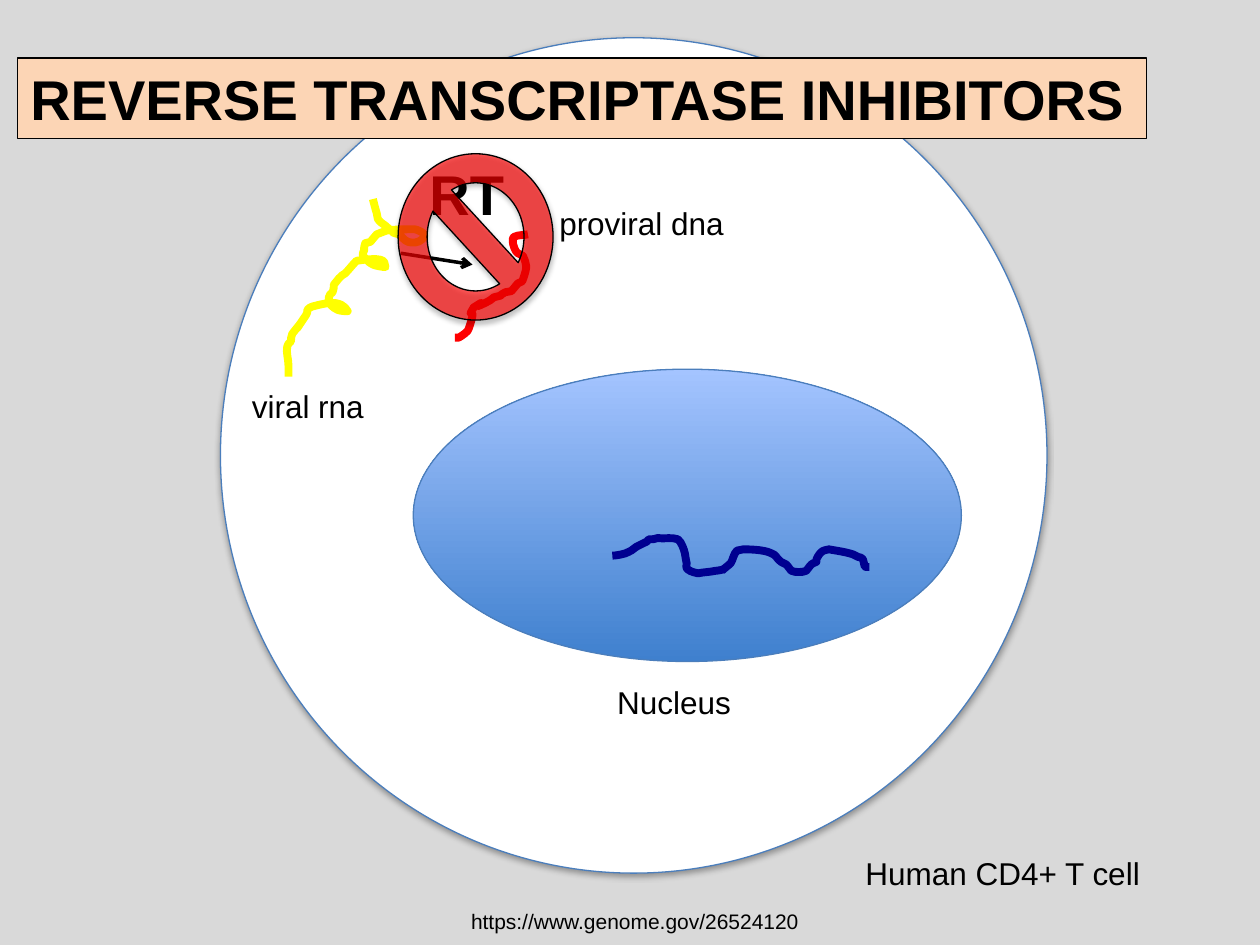
"""Build a slide showing how reverse transcriptase inhibitors act in a T cell."""
from dataclasses import dataclass

from lxml import etree
from pptx import Presentation
from pptx import util as u
from pptx.dml.color import RGBColor
from pptx.enum import shapes, text
from pptx.oxml import ns
from pptx.shapes.autoshape import Shape
from pptx.slide import Slide

WIDTH, HEIGHT = u.Inches(10), u.Inches(7.5)
COLUMNS, ROWS = 1000, 750

BLACK = RGBColor(0x00, 0x00, 0x00)
WHITE = RGBColor(0xFF, 0xFF, 0xFF)
GREY = RGBColor(0xD9, 0xD9, 0xD9)
OUTLINE_BLUE = RGBColor(0x4B, 0x7E, 0xBC)
DEEP_BLUE = RGBColor(0x3F, 0x80, 0xCE)
PALE_BLUE = RGBColor(0xA4, 0xC4, 0xFF)
NAVY = RGBColor(0x00, 0x00, 0x90)
YELLOW = RGBColor(0xFF, 0xFF, 0x00)
RED = RGBColor(0xFF, 0x00, 0x00)
PEACH = RGBColor(0xFC, 0xD5, 0xB5)

Point = tuple[int, int]


@dataclass(frozen=True)
class Area:
    """A block of grid cells."""
    column: int
    row: int
    columns: int
    rows: int

    def box(self) -> tuple[int, int, int, int]:
        """Return left, top, width and height."""
        return (*place((self.column, self.row)), *place((self.columns, self.rows)))


@dataclass(frozen=True)
class Label:
    """A caption with its place and size."""
    words: str
    area: Area
    points: int = 18
    bold: bool = False


@dataclass(frozen=True)
class Strand:
    """A nucleic acid strand: a start, then two controls and an end per curve."""
    color: RGBColor
    start: Point
    curves: tuple[tuple[int, int, int, int, int, int], ...]


LABELS = (
    Label("Human CD4+ T cell", Area(677, 673, 240, 40)),
    Label("Nucleus", Area(480, 537, 111, 40)),
    Label("viral rna", Area(190, 302, 111, 40)),
    Label("proviral dna", Area(434, 157, 152, 40)),
    Label("https://www.genome.gov/26524120", Area(364, 716, 283, 30), 12),
    Label("RT", Area(331, 122, 80, 64), 32, True),
)
TITLE = Label("REVERSE TRANSCRIPTASE INHIBITORS", Area(14, 46, 896, 64), 32, True)

HOST_DNA = (
    Strand(NAVY, (486, 441), (
        (488, 441, 496, 440, 499, 438), (502, 437, 504, 434, 507, 433),
        (508, 432, 510, 432, 511, 431), (513, 431, 514, 429, 515, 428),
        (518, 428, 520, 428, 522, 427), (527, 428, 533, 426, 538, 428),
        (541, 430, 543, 437, 543, 437), (544, 440, 544, 443, 545, 447),
        (545, 448, 544, 451, 546, 452), (548, 454, 554, 455, 554, 455),
        (559, 454, 564, 454, 568, 453), (570, 453, 574, 452, 574, 452))),
    Strand(NAVY, (573, 453), (
        (575, 451, 578, 449, 580, 447), (582, 444, 582, 440, 585, 437),
        (587, 436, 588, 436, 590, 436), (593, 436, 606, 436, 612, 439),
        (617, 441, 615, 442, 620, 446), (621, 447, 623, 447, 624, 448),
        (626, 450, 627, 452, 628, 453), (630, 454, 632, 454, 634, 454),
        (636, 454, 638, 454, 640, 453), (641, 452, 642, 450, 644, 448),
        (645, 447, 646, 447, 648, 446), (648, 444, 648, 443, 649, 442),
        (652, 437, 653, 437, 658, 436), (663, 437, 671, 438, 677, 440),
        (678, 441, 680, 441, 681, 442), (683, 442, 684, 443, 685, 444),
        (687, 451, 685, 450, 690, 450))),
)
VIRAL_RNA = Strand(YELLOW, (296, 158), (
    (297, 162, 298, 166, 299, 169), (299, 171, 299, 172, 300, 174),
    (303, 178, 304, 177, 308, 181), (315, 186, 309, 184, 317, 186),
    (319, 188, 321, 191, 324, 192), (327, 193, 332, 193, 335, 190),
    (341, 185, 330, 182, 329, 182), (322, 182, 314, 182, 307, 183),
    (304, 184, 299, 186, 299, 186), (297, 188, 296, 190, 294, 192),
    (293, 193, 291, 192, 290, 193), (289, 195, 289, 197, 289, 199),
    (288, 200, 288, 201, 288, 203), (291, 206, 292, 208, 296, 210),
    (298, 211, 304, 212, 306, 212), (305, 211, 306, 208, 304, 207),
    (300, 204, 284, 207, 283, 207), (280, 210, 277, 214, 274, 217),
    (272, 218, 271, 219, 269, 221), (268, 223, 266, 224, 265, 226),
    (265, 228, 265, 230, 264, 232), (263, 233, 261, 234, 261, 236),
    (260, 241, 264, 244, 268, 246), (271, 247, 274, 247, 276, 247),
    (275, 245, 273, 243, 271, 242), (265, 239, 258, 241, 253, 242),
    (250, 243, 246, 243, 244, 246), (244, 247, 244, 249, 243, 250),
    (242, 252, 240, 254, 239, 256), (229, 270, 246, 247, 232, 265),
    (231, 267, 231, 269, 231, 271), (230, 272, 228, 273, 228, 275),
    (227, 280, 229, 285, 229, 290), (229, 293, 229, 296, 229, 299)))
PROVIRAL_DNA = Strand(RED, (419, 186), (
    (416, 187, 412, 186, 408, 188), (407, 188, 407, 190, 407, 192),
    (407, 194, 409, 200, 411, 201), (412, 202, 414, 202, 415, 203),
    (418, 210, 419, 211, 415, 222), (415, 224, 412, 224, 411, 225),
    (409, 227, 408, 229, 406, 231), (404, 231, 403, 231, 401, 232),
    (392, 237, 403, 233, 392, 236), (390, 238, 388, 239, 386, 240),
    (368, 249, 392, 234, 376, 244), (369, 256, 380, 238, 372, 261),
    (372, 263, 366, 267, 364, 268), (363, 268, 362, 268, 361, 268)))


def place(cell: Point) -> Point:
    """Convert grid columns and rows to lengths."""
    return round(WIDTH * cell[0] / COLUMNS), round(HEIGHT * cell[1] / ROWS)


def add_body(slide: Slide, kind: shapes.MSO_SHAPE, area: Area,
             outline: RGBColor) -> Shape:
    """Add an outlined preset shape without a shadow."""
    body = slide.shapes.add_shape(kind, *area.box())
    body.shadow.inherit = False
    body.line.color.rgb = outline
    body.line.width = u.Pt(0.75)
    return body


def drop_shadow(body: Shape) -> None:
    """Cast a soft shadow straight below a shape."""
    effects = body._element.spPr.find(ns.qn("a:effectLst"))
    shadow = etree.SubElement(
        effects, ns.qn("a:outerShdw"), blurRad=str(u.Pt(3.1)),
        dist=str(u.Pt(1.8)), dir="5400000", rotWithShape="0")
    color = etree.SubElement(shadow, ns.qn("a:srgbClr"), val=str(BLACK))
    etree.SubElement(color, ns.qn("a:alpha"), val="35000")


def add_strand(slide: Slide, strand: Strand) -> None:
    """Draw a strand as an open outline of cubic curves."""
    builder = slide.shapes.build_freeform(*place(strand.start))
    builder.add_line_segments([place(curve[4:]) for curve in strand.curves], close=False)
    outline = builder.convert_to_shape()
    segments = list(outline._element.spPr.iter(ns.qn("a:lnTo")))
    for segment, curve in zip(segments, strand.curves):
        bend = etree.Element(ns.qn("a:cubicBezTo"))
        for cell in (curve[:2], curve[2:4], curve[4:]):
            x, y = place(cell)
            etree.SubElement(bend, ns.qn("a:pt"), x=str(x - outline.left),
                             y=str(y - outline.top))
        segment.getparent().replace(segment, bend)
    outline.shadow.inherit = False
    outline.fill.background()
    outline.line.color.rgb = strand.color
    outline.line.width = u.Pt(4.5)


def add_arrow(slide: Slide, start: Point, end: Point) -> None:
    """Draw the transcription arrow."""
    arrow = slide.shapes.add_connector(
        shapes.MSO_CONNECTOR.STRAIGHT, *place(start), *place(end))
    arrow.line.color.rgb = BLACK
    arrow.line.width = u.Pt(2)
    etree.SubElement(arrow.line._get_or_add_ln(), ns.qn("a:tailEnd"), type="arrow")
    etree.SubElement(arrow._element.spPr, ns.qn("a:effectLst"))


def write(holder: Shape, label: Label) -> None:
    """Set and format the words of a label."""
    frame = holder.text_frame
    frame.text = label.words
    frame.word_wrap = False
    frame.auto_size = text.MSO_AUTO_SIZE.NONE
    frame.vertical_anchor = text.MSO_ANCHOR.TOP
    paragraph = frame.paragraphs[0]
    paragraph.alignment = text.PP_ALIGN.LEFT
    font = paragraph.runs[0].font
    font.name, font.size, font.bold = "Arial", u.Pt(label.points), label.bold
    font.color.rgb = BLACK


def add_title(slide: Slide) -> None:
    """Place the title banner in front of the cell."""
    banner = slide.shapes.title
    banner.left, banner.top, banner.width, banner.height = TITLE.area.box()
    banner.fill.solid()
    banner.fill.fore_color.rgb = PEACH
    banner.line.color.rgb = BLACK
    banner.line.width = u.Pt(0.75)
    write(banner, TITLE)
    slide.shapes._spTree.append(banner._element)


def main() -> None:
    """Draw the cell, its contents and the labels, then save."""
    deck = Presentation()
    deck.slide_width, deck.slide_height = WIDTH, HEIGHT
    slide = deck.slides.add_slide(deck.slide_layouts.get_by_name("Title Only"))
    slide.background.fill.solid()
    slide.background.fill.fore_color.rgb = GREY
    oval = shapes.MSO_SHAPE.OVAL
    cell = add_body(slide, oval, Area(175, 30, 656, 663), OUTLINE_BLUE)
    nucleus = add_body(slide, oval, Area(328, 293, 435, 232), OUTLINE_BLUE)
    nucleus.fill.gradient()
    nucleus.fill.gradient_angle = 90
    for stop, position, color in zip(
            nucleus.fill.gradient_stops, (0, 1), (DEEP_BLUE, PALE_BLUE)):
        stop.position, stop.color.rgb = position, color
    for strand in (*HOST_DNA, VIRAL_RNA):
        add_strand(slide, strand)
    add_arrow(slide, (318, 201), (375, 210))
    add_strand(slide, PROVIRAL_DNA)
    for label in LABELS:
        write(slide.shapes.add_textbox(*label.area.box()), label)
    inhibitor = add_body(slide, shapes.MSO_SHAPE.NO_SYMBOL, Area(316, 122, 123, 132), BLACK)
    for body, color in ((cell, WHITE), (inhibitor, RED)):
        body.fill.solid()
        body.fill.fore_color.rgb = color
        drop_shadow(body)
    red = inhibitor._element.spPr.find(ns.qn("a:solidFill"))[0]
    etree.SubElement(red, ns.qn("a:alpha"), val="65000")
    add_title(slide)
    deck.save("out.pptx")


if __name__ == "__main__":
    main()
